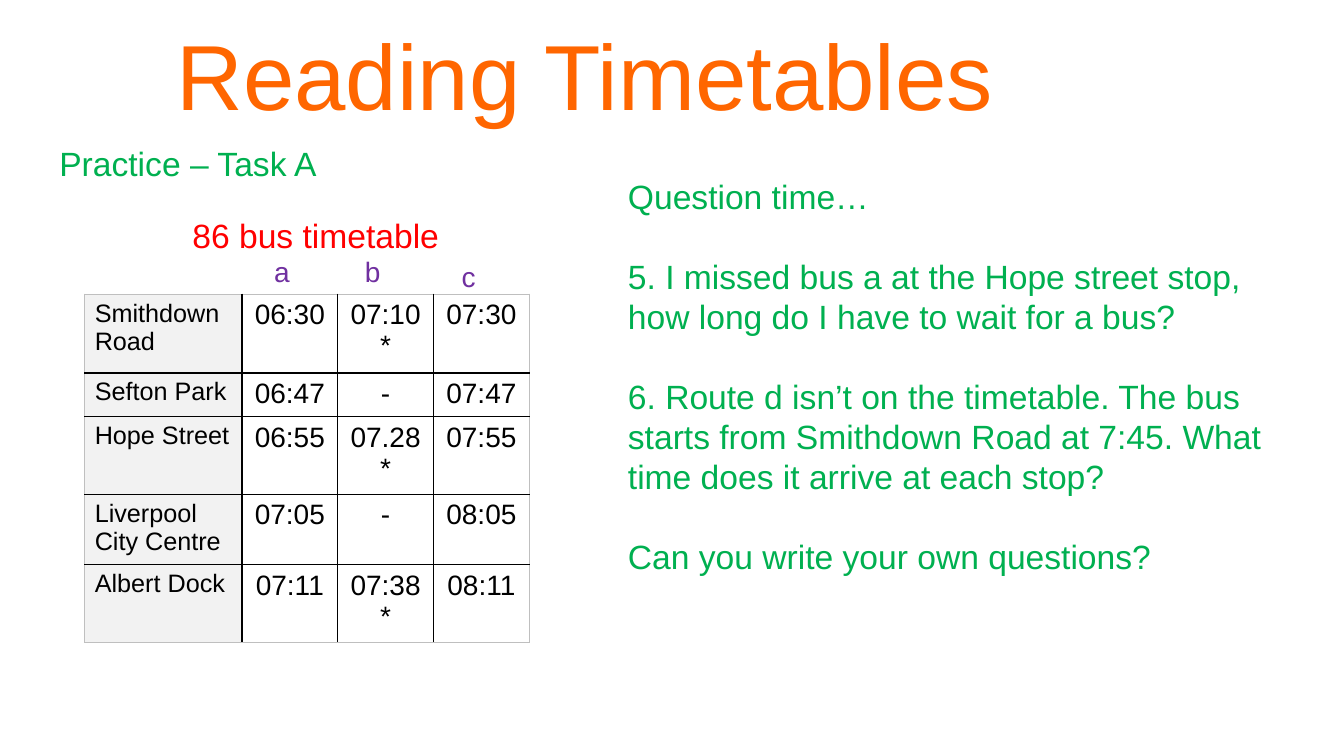
import pptx
import pptx.util
import pptx.dml.color
import pptx.enum.text
import pptx.oxml.ns
import lxml.etree
from pptx.util import Inches

FONT = "Arial"
ORANGE, GREEN, RED, PURPLE = "FF6600", "00B050", "FF0000", "7030A0"
BLACK, WHITE, STOP_FILL, EDGE = "000000", "FFFFFF", "F2F2F2", "BFBFBF"

TIMETABLE = [
    ("Smithdown Road", "06:30", "07:10*", "07:30"),
    ("Sefton Park", "06:47", "-", "07:47"),
    ("Hope Street", "06:55", "07.28*", "07:55"),
    ("Liverpool City Centre", "07:05", "-", "08:05"),
    ("Albert Dock", "07:11", "07:38*", "08:11"),
]
COLUMN_WIDTHS = [1.56, 0.95, 0.95, 0.95]
ROW_HEIGHTS = [0.78, 0.43, 0.77, 0.7, 0.77]
QUESTIONS = [
    "Question time…",
    "5. I missed bus a at the Hope street stop, how long do I have to wait for a bus?",
    "6. Route d isn’t on the timetable. The bus starts from Smithdown Road at 7:45. "
    "What time does it arrive at each stop?",
    "Can you write your own questions?",
]
ROUTE_LABELS = [("a", 2.62, 2.48), ("b", 3.52, 2.48), ("c", 4.48, 2.53)]


def colour(value):
    return pptx.dml.color.RGBColor.from_string(value)


def fill_with(part, value):
    part.fill.solid()
    part.fill.fore_color.rgb = colour(value)


def write(frame, paragraphs, size, value, align=pptx.enum.text.PP_ALIGN.LEFT, gap=0):
    """Fill a text frame with one run per paragraph, gap points apart."""
    frame.word_wrap = True
    for index, words in enumerate(paragraphs):
        paragraph = frame.add_paragraph() if index else frame.paragraphs[0]
        paragraph.alignment = align
        paragraph.space_before = pptx.util.Pt(gap if index else 0)
        run = paragraph.add_run()
        run.text = words
        run.font.name = FONT
        run.font.size = pptx.util.Pt(size)
        run.font.color.rgb = colour(value)


def add_title(slide, words):
    title = slide.shapes.title
    title.left, title.top = Inches(1.65), Inches(0.13)
    title.width, title.height = Inches(9.53), Inches(1.21)
    frame = title.text_frame
    frame.auto_size = pptx.enum.text.MSO_AUTO_SIZE.NONE
    frame.vertical_anchor = pptx.enum.text.MSO_ANCHOR.TOP
    write(frame, [words], 66, ORANGE)


def add_text(slide, box, paragraphs, size, value, gap=0):
    label = slide.shapes.add_textbox(*map(Inches, box))
    write(label.text_frame, paragraphs, size, value, gap=gap)
    return label


def set_border(cell, side, value):
    properties = cell._tc.get_or_add_tcPr()
    qn = pptx.oxml.ns.qn
    line = lxml.etree.Element(qn(f"a:{side}"), w=str(pptx.util.Pt(1)))
    solid = lxml.etree.SubElement(line, qn("a:solidFill"))
    lxml.etree.SubElement(solid, qn("a:srgbClr"), val=value)
    properties.append(line)


def add_timetable(slide):
    rows, columns = len(TIMETABLE), len(COLUMN_WIDTHS)
    timetable = slide.shapes.add_table(
        rows, columns, Inches(0.84), Inches(2.92),
        Inches(sum(COLUMN_WIDTHS)), Inches(sum(ROW_HEIGHTS))).table
    timetable.first_row = timetable.horz_banding = False
    for column, width in zip(timetable.columns, COLUMN_WIDTHS):
        column.width = Inches(width)
    for r, (stop_times, height) in enumerate(zip(TIMETABLE, ROW_HEIGHTS)):
        timetable.rows[r].height = Inches(height)
        for c, words in enumerate(stop_times):
            cell = timetable.cell(r, c)
            # Borders precede the fill in the cell properties
            outer = {"lnL": c == 0, "lnR": c == columns - 1,
                     "lnT": r == 0, "lnB": r == rows - 1}
            for side, is_edge in outer.items():
                set_border(cell, side, EDGE if is_edge else BLACK)
            fill_with(cell, WHITE if c else STOP_FILL)
            if c:
                write(cell.text_frame, [words], 20, BLACK, pptx.enum.text.PP_ALIGN.CENTER)
            else:
                write(cell.text_frame, [words], 18, BLACK)


def main():
    deck = pptx.Presentation()
    deck.slide_width, deck.slide_height = Inches(13.33), Inches(7.5)
    slide = deck.slides.add_slide(deck.slide_layouts[5])

    # Headings
    add_title(slide, "Reading Timetables")
    add_text(slide, (0.49, 1.37, 6.67, 0.5), ["Practice – Task A"], 24, GREEN)
    caption = add_text(slide, (1.81, 2.08, 5.49, 0.5), ["86 bus timetable"], 24, RED)
    fill_with(caption, WHITE)

    # Timetable and questions
    add_timetable(slide)
    add_text(slide, (6.13, 1.7, 6.67, 4.14), QUESTIONS, 24, GREEN, gap=28)

    # Route letters above the time columns
    for letter, left, top in ROUTE_LABELS:
        add_text(slide, (left, top, 2.09, 0.44), [letter], 20, PURPLE)

    deck.save("out.pptx")


if __name__ == "__main__":
    main()
